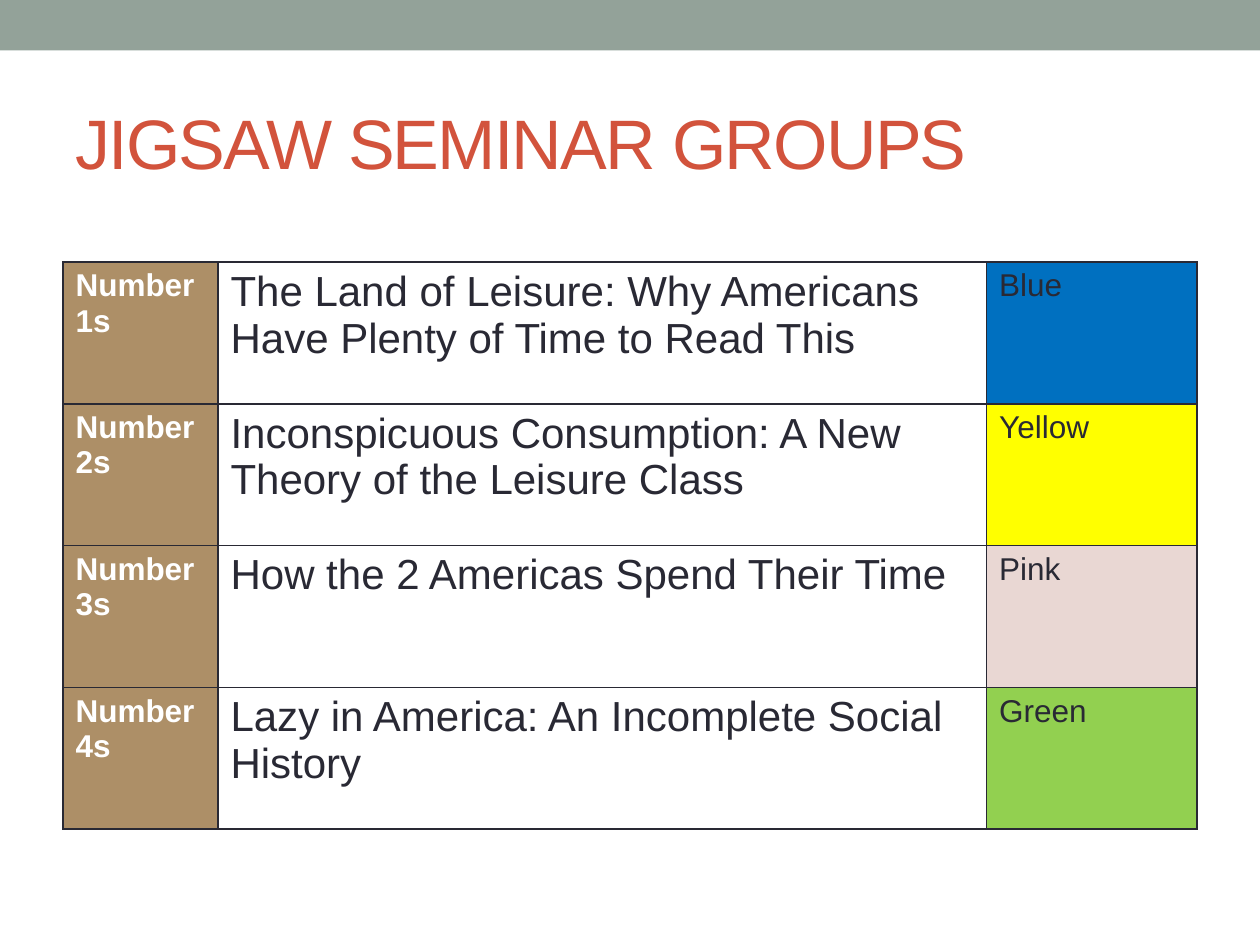
from dataclasses import dataclass

from lxml import etree
from pptx import Presentation
from pptx.dml.color import RGBColor
from pptx.enum.shapes import MSO_SHAPE
from pptx.enum.text import MSO_ANCHOR
from pptx.oxml.ns import qn
from pptx.util import Inches, Pt

RECTANGLE = MSO_SHAPE.RECTANGLE
MIDDLE = MSO_ANCHOR.MIDDLE

TITLE = "JIGSAW SEMINAR GROUPS"
GROUPS = [
    ("Number 1s", "The Land of Leisure: Why Americans Have Plenty of Time to Read This",
     "Blue", "0070C0"),
    ("Number 2s", "Inconspicuous Consumption: A New Theory of the Leisure Class",
     "Yellow", "FFFF00"),
    ("Number 3s", "How the 2 Americas Spend Their Time", "Pink", "E9D7D3"),
    ("Number 4s", "Lazy in America: An Incomplete Social History", "Green", "92D050"),
]
COLUMN_WIDTHS = (1.23, 6.1, 1.67)
TABLE_HEIGHT = 4.5


@dataclass(frozen=True)
class Theme:
    font: str = "Arial"
    band: str = "93A299"
    title: str = "D2533C"
    ink: str = "292934"
    label: str = "FFFFFF"
    label_fill: str = "AD8F67"
    title_size: int = 40
    article_size: int = 24
    small_size: int = 18
    title_spacing: int = -100  # hundredths of a point
    border_width: int = 1


THEME = Theme()


def style_text(paragraph, size, color, bold=False):
    font = paragraph.font
    font.name = THEME.font
    font.size = Pt(size)
    font.bold = bold
    font.color.rgb = RGBColor.from_string(color)


def add_borders(cell):
    """Outline a cell; border elements must come before its fill."""
    properties = cell._tc.get_or_add_tcPr()
    for index, side in enumerate(("a:lnL", "a:lnR", "a:lnT", "a:lnB")):
        line = etree.Element(qn(side), w=str(Pt(THEME.border_width)))
        fill = etree.SubElement(line, qn("a:solidFill"))
        etree.SubElement(fill, qn("a:srgbClr"), val=THEME.ink)
        properties.insert(index, line)


def fill_cell(cell, text, size, color, fill=None, bold=False):
    cell.text = text
    style_text(cell.text_frame.paragraphs[0], size, color, bold)
    if fill:
        cell.fill.solid()
        cell.fill.fore_color.rgb = RGBColor.from_string(fill)
    else:
        cell.fill.background()
    add_borders(cell)


def add_band(slide, width):
    band = slide.shapes.add_shape(RECTANGLE, 0, 0, width, Inches(0.4))
    band.shadow.inherit = False
    band.fill.solid()
    band.fill.fore_color.rgb = RGBColor.from_string(THEME.band)
    band.line.fill.background()


def add_title(slide):
    box = slide.shapes.add_textbox(Inches(0.5), Inches(0.58), Inches(9), Inches(1.08))
    frame = box.text_frame
    frame.word_wrap = True
    frame.vertical_anchor = MIDDLE
    paragraph = frame.paragraphs[0]
    run = paragraph.add_run()
    run.text = TITLE
    style_text(paragraph, THEME.title_size, THEME.title)
    run.font._element.set("spc", str(THEME.title_spacing))


def add_groups_table(slide):
    table = slide.shapes.add_table(
        len(GROUPS), len(COLUMN_WIDTHS), Inches(0.5), Inches(2.08),
        Inches(sum(COLUMN_WIDTHS)), Inches(TABLE_HEIGHT)).table
    table.first_row = False
    table.horz_banding = False
    for column, width in zip(table.columns, COLUMN_WIDTHS):
        column.width = Inches(width)
    for row, (number, article, color_name, color) in zip(table.rows, GROUPS):
        row.height = Inches(TABLE_HEIGHT / len(GROUPS))
        number_cell, article_cell, color_cell = row.cells
        fill_cell(number_cell, number, THEME.small_size, THEME.label,
                  THEME.label_fill, bold=True)
        fill_cell(article_cell, article, THEME.article_size, THEME.ink)
        fill_cell(color_cell, color_name, THEME.small_size, THEME.ink, color)


def main():
    deck = Presentation()
    deck.slide_width, deck.slide_height = Inches(10), Inches(7.5)
    slide = deck.slides.add_slide(deck.slide_layouts[6])
    add_band(slide, deck.slide_width)
    add_title(slide)
    add_groups_table(slide)
    deck.save("out.pptx")


if __name__ == "__main__":
    main()
